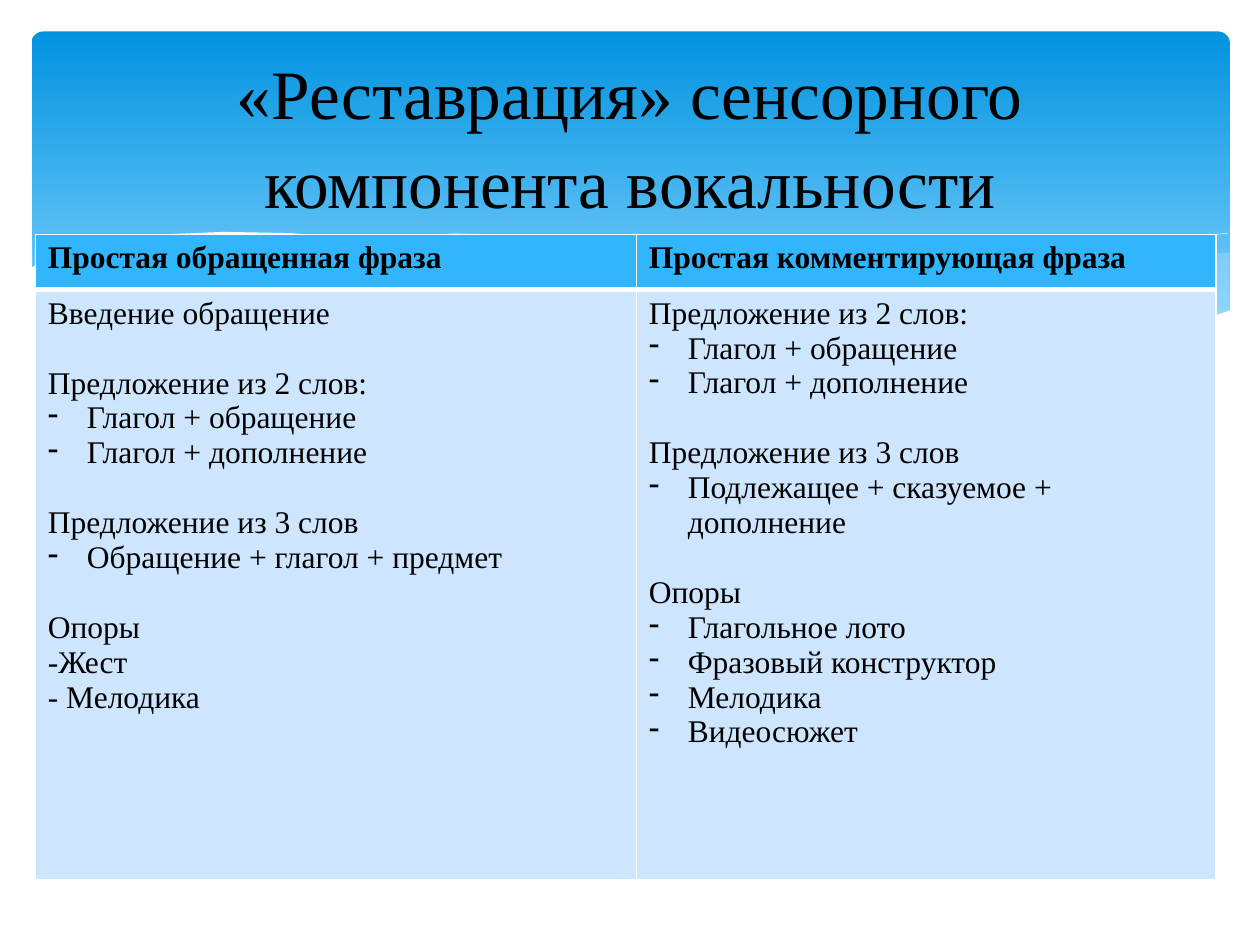
from dataclasses import dataclass

from lxml.etree import SubElement
from pptx import Presentation
from pptx.dml.color import RGBColor
from pptx.enum.shapes import MSO_SHAPE as Shape
from pptx.enum.text import MSO_ANCHOR as Anchor, PP_ALIGN as Align
from pptx.oxml.ns import qn
from pptx.util import Inches, Pt


@dataclass(frozen=True)
class Theme:
    font: str = "Times New Roman"
    title_size: float = 39.6
    body_size: float = 18
    gap: float = 20
    indent: float = 0.31
    ink: str = "000000"
    white: str = "FFFFFF"
    sky_top: str = "0293E0"
    sky_bottom: str = "83D3FE"
    mist: str = "C6E7FC"
    header: str = "31B6FD"
    body: str = "CEE5FE"


THEME = Theme()
COLUMNS, ROWS = 100, 75  # slide grid


def color(code):
    return RGBColor.from_string(code)


def write(para, text, size=THEME.body_size, bold=False, align=Align.LEFT,
          before=0, spacing=None, bullet=None):
    """Fill one paragraph with formatted text."""
    para.alignment = align
    para.space_before = Pt(before)
    if spacing:
        para.line_spacing = spacing
    span = para.add_run()
    span.text = text
    span.font.name = THEME.font
    span.font.size = Pt(size)
    span.font.bold = bold
    span.font.color.rgb = color(THEME.ink)
    if bullet:
        props = para._p.get_or_add_pPr()
        props.set("marL", str(Inches(THEME.indent)))
        props.set("indent", str(-Inches(THEME.indent)))
        SubElement(props, qn("a:buChar")).set("char", bullet)


class SlideBuilder:
    def __init__(self, deck, theme):
        self.theme = theme
        self.page = deck.slides.add_slide(deck.slide_layouts[5])
        self.column = deck.slide_width / COLUMNS
        self.row = deck.slide_height / ROWS

    def place(self, left, top, width, height):
        return (round(left * self.column), round(top * self.row),
                round(width * self.column), round(height * self.row))

    def banner(self, *area):
        box = self.page.shapes.add_shape(Shape.ROUNDED_RECTANGLE, *self.place(*area))
        box.adjustments[0] = 0.034
        box.shadow.inherit = False
        box.line.fill.background()
        box.fill.gradient()
        box.fill.gradient_angle = 270
        shades = (self.theme.sky_top, 0), (self.theme.sky_bottom, 0.9)
        for stop, (shade, position) in zip(box.fill.gradient_stops, shades):
            stop.color.rgb = color(shade)
            stop.position = position

    def wave(self, points, fill=None, opacity=100):
        """A filled outline, or an open white line when there is no fill."""
        start, *rest = [self.place(x, y, 0, 0)[:2] for x, y in points]
        builder = self.page.shapes.build_freeform(*start)
        builder.add_line_segments(rest, close=bool(fill))
        outline = builder.convert_to_shape()
        outline.shadow.inherit = False
        if not fill:
            outline.fill.background()
            outline.line.color.rgb = color(self.theme.white)
            outline.line.width = Pt(0.25)
            return
        outline.line.fill.background()
        outline.fill.solid()
        outline.fill.fore_color.rgb = color(fill)
        if opacity < 100:
            shade = outline._element.spPr.find(".//" + qn("a:srgbClr"))
            SubElement(shade, qn("a:alpha")).set("val", str(opacity * 1000))

    def title(self, text, *area):
        box = self.page.shapes.title
        box.left, box.top, box.width, box.height = self.place(*area)
        frame = box.text_frame
        frame.word_wrap = True
        frame.vertical_anchor = Anchor.MIDDLE
        write(frame.paragraphs[0], text, size=self.theme.title_size,
              align=Align.CENTER, spacing=1.08)
        self.page.shapes._spTree.append(box._element)  # in front of the waves

    def cell(self, cell, blocks, fill, bold=False, **borders):
        """Write blocks of lines, with a gap between blocks."""
        frame = cell.text_frame
        para = frame.paragraphs[0]
        for block_number, block in enumerate(blocks):
            for line_number, line in enumerate(block):
                if block_number or line_number:
                    para = frame.add_paragraph()
                bulleted = line.startswith("•")
                opens_block = block_number and not line_number
                write(para, line.lstrip("•"), bold=bold,
                      before=self.theme.gap if opens_block else 0,
                      bullet="-" if bulleted else None)
        props = cell._tc.get_or_add_tcPr()
        for side in ("lnL", "lnR", "lnT", "lnB"):
            border = SubElement(props, qn("a:" + side), w=str(Pt(borders.get(side, 1))))
            solid = SubElement(border, qn("a:solidFill"))
            SubElement(solid, qn("a:srgbClr"), val=self.theme.white)
        cell.fill.solid()
        cell.fill.fore_color.rgb = color(fill)

    def table(self, headings, bodies, widths, heights, left, top):
        area = self.place(left, top, sum(widths), sum(heights))
        table = self.page.shapes.add_table(2, len(headings), *area).table
        table.horz_banding = False
        for row, height in zip(table.rows, heights):
            row.height = round(height * self.row)
        for index, width in enumerate(widths):
            table.columns[index].width = round(width * self.column)
            self.cell(table.cell(0, index), [[headings[index]]],
                      self.theme.header, bold=True, lnB=3)
            self.cell(table.cell(1, index), bodies[index], self.theme.body, lnT=3)


# Wave outlines, in grid columns and rows
RIGHT_MIST = [(97.6, 20), (93.5, 20.7), (89.1, 21.6), (86.1, 22.3), (77.9, 24.2),
              (66.1, 26.5), (71.9, 27.1), (76.9, 27.7), (81.4, 27.8), (86.3, 27.5),
              (90.5, 26.9), (94.2, 25.9), (97.6, 24.7)]
MIDDLE_MIST = [(89.3, 27.3), (80.7, 26), (70.6, 24), (62.9, 22.2), (55.5, 20.5),
               (48.9, 19.4), (42, 18.7), (36.1, 18.5), (28.6, 19.1), (36.2, 20.3),
               (44.9, 22.2), (56.6, 24.8), (65, 26.4), (72.2, 27.4), (79.6, 27.8),
               (85.7, 27.7)]
LONG_LINE = [(30.9, 19.5), (36.3, 18.9), (43.3, 18.7), (51, 19.2), (58.2, 20),
             (66.5, 21.3), (76, 23.3), (83.1, 25.1), (90.7, 27.2)]
SHORT_LINE = [(61.3, 25.7), (69.5, 23.5), (77.6, 21.6), (86.6, 19.9),
              (92.4, 19), (97.5, 18.5)]
WHITE_WAVE = [(97.7, 24.6), (94, 25.9), (89.9, 26.9), (85, 27.5), (79.3, 27.6),
              (72.6, 27.2), (64.8, 26.2), (55.5, 24.5), (44.7, 22), (36.5, 20.2),
              (29.2, 19), (23, 18.5), (17.7, 18.4), (13.2, 18.6), (9.5, 19.1),
              (6.7, 19.7), (4.6, 20.3), (2.3, 21.3), (2.3, 32.9), (97.7, 32.9)]

# Table text; "•" marks a list item
HEADINGS = ["Простая обращенная фраза", "Простая комментирующая фраза"]
TWO_WORDS = ["Предложение из 2 слов:", "•Глагол + обращение", "•Глагол + дополнение"]
THREE_WORDS = "Предложение из 3 слов"
BODIES = [
    [["Введение обращение"],
     TWO_WORDS,
     [THREE_WORDS, "•Обращение + глагол + предмет"],
     ["Опоры", "-Жест", "- Мелодика"]],
    [TWO_WORDS,
     [THREE_WORDS, "•Подлежащее + сказуемое + дополнение"],
     ["Опоры", "•Глагольное лото", "•Фразовый конструктор", "•Мелодика",
      "•Видеосюжет"]],
]


def main():
    deck = Presentation()
    deck.slide_width, deck.slide_height = Inches(10), Inches(7.5)
    slide = SlideBuilder(deck, THEME)

    # Background banner and waves
    slide.banner(2.5, 2.5, 95.1, 27)
    slide.wave(RIGHT_MIST, fill=THEME.mist, opacity=29)
    slide.wave(MIDDLE_MIST, fill=THEME.mist, opacity=40)
    slide.wave(LONG_LINE)
    slide.wave(SHORT_LINE)
    slide.wave(WHITE_WAVE, fill=THEME.white)

    # Title and comparison table
    slide.title("«Реставрация» сенсорного компонента вокальности", 5, 3.7, 90, 13.7)
    slide.table(HEADINGS, BODIES, widths=(47.7, 46), heights=(4.4, 46.8),
                left=2.8, top=18.6)
    deck.save("out.pptx")


if __name__ == "__main__":
    main()
